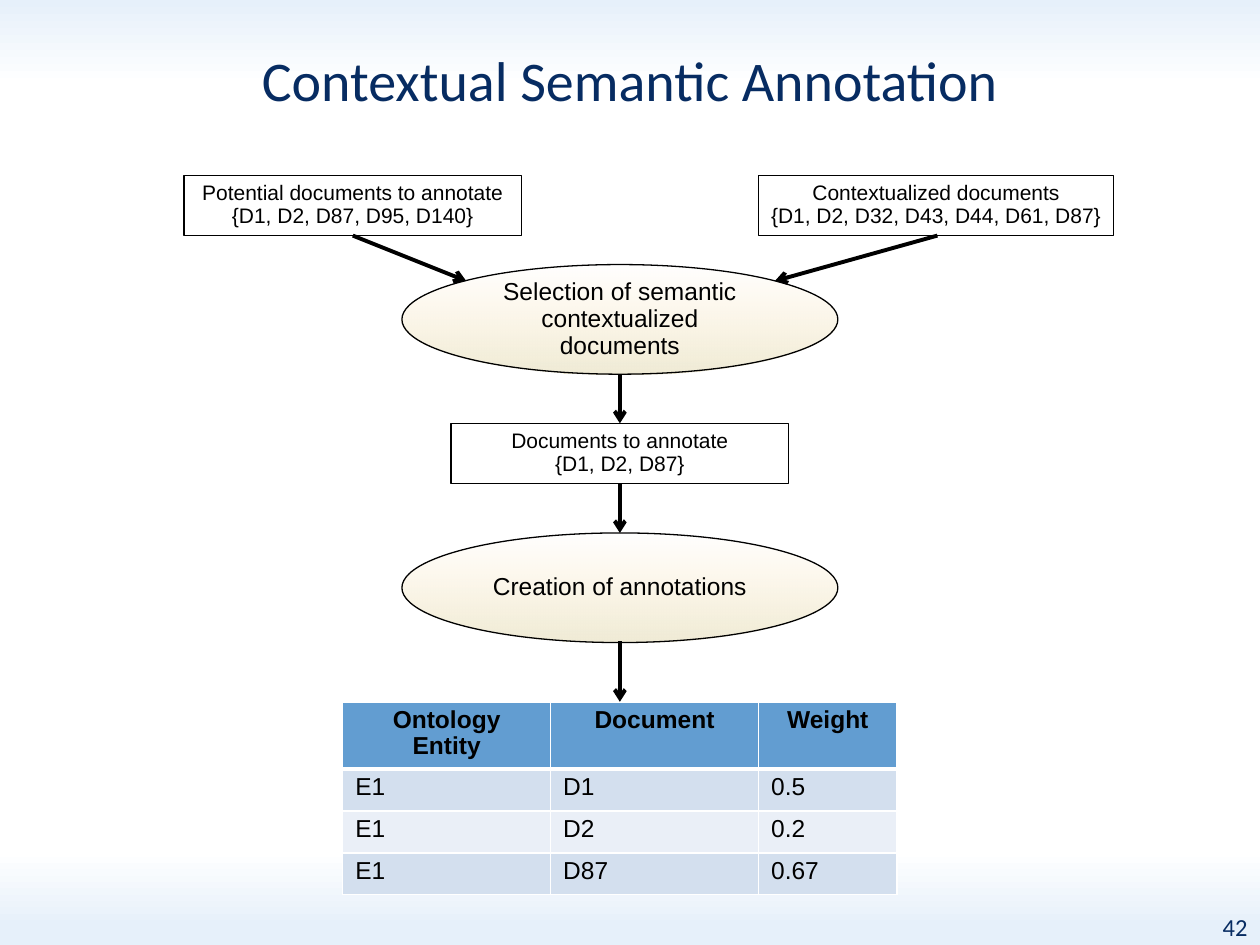
from typing import NamedTuple

from lxml import etree
from pptx import Presentation
from pptx import util as u
from pptx.dml.color import RGBColor
from pptx.enum import shapes, text
from pptx.oxml import ns

COLORS = {
    "navy": "072C62", "black": "000000", "white": "FFFFFF", "sky": "E6F0FA",
    "cream": "FFEFD1", "sand": "F0EBD5",
    "header": "629DD1", "band": "D3DFEE", "light": "EAEFF7",
}
AXIS = 4.92  # centre line of the flow
LINE_SPACING = 0.93
CENTER, LEFT, RIGHT = text.PP_ALIGN.CENTER, text.PP_ALIGN.LEFT, text.PP_ALIGN.RIGHT


class Stop(NamedTuple):
    pos: int
    color: str
    alpha: int = 100


class Font(NamedTuple):
    size: int
    color: str = "black"
    name: str = "Arial"
    bold: bool = False


class DocumentBox(NamedTuple):
    left: float
    top: float
    width: float
    lines: tuple[str, ...]


class Step(NamedTuple):
    top: float
    label: str


class Arrow(NamedTuple):
    x1: float
    y1: float
    x2: float
    y2: float


BOXES = [
    DocumentBox(1.46, 1.39, 2.68, ("Potential documents to annotate", "{D1, D2, D87, D95, D140}")),
    DocumentBox(6.02, 1.39, 2.82, ("Contextualized documents", "{D1, D2, D32, D43, D44, D61, D87}")),
    DocumentBox(AXIS - 1.34, 3.36, 2.68, ("Documents to annotate", "{D1, D2, D87}")),
]
STEPS = [Step(2.1, "Selection of semantic contextualized documents"),
         Step(4.23, "Creation of annotations")]
ARROWS = [Arrow(2.8, 1.87, 3.7, 2.23), Arrow(7.44, 1.87, 6.15, 2.23)] + [
    Arrow(AXIS, y1, AXIS, y2)
    for y1, y2 in [(2.97, 3.36), (3.84, 4.23), (5.09, 5.57)]
]
ROWS = [
    ("Ontology Entity", "Document", "Weight"),
    ("E1", "D1", "0.5"),
    ("E1", "D2", "0.2"),
    ("E1", "D87", "0.67"),
]
COLUMN_WIDTHS = [1.65, 1.65, 1.1]
ROW_HEIGHT = 1.33 / len(ROWS)


def rgb(name: str) -> RGBColor:
    return RGBColor.from_string(COLORS[name])


def child(parent, tag: str, **attrs: str):
    return etree.SubElement(parent, ns.qn(tag), **attrs)


def set_gradient(fill, element, stops: list[Stop]) -> None:
    """Fill from top to bottom; element is the XML that holds the fill."""
    fill.gradient()
    fill.gradient_angle = 270
    gs_list = element.find(".//" + ns.qn("a:gsLst"))
    for old in list(gs_list):
        gs_list.remove(old)
    for stop in stops:
        gs = child(gs_list, "a:gs", pos=str(stop.pos * 1000))
        color = child(gs, "a:srgbClr", val=COLORS[stop.color])
        if stop.alpha < 100:
            child(color, "a:alpha", val=str(stop.alpha * 1000))


def write(tf, lines: tuple[str, ...], font: Font, align=CENTER) -> None:
    for i, line in enumerate(lines):
        p = tf.paragraphs[0] if i == 0 else tf.add_paragraph()
        p.alignment = align
        p.line_spacing = LINE_SPACING
        r = p.add_run()
        r.text = line
        r.font.size = u.Pt(font.size)
        r.font.name = font.name
        r.font.bold = font.bold
        r.font.color.rgb = rgb(font.color)


def add_label(s, left: float, top: float, width: float, height: float,
              label: str, font: Font, align):
    tf = s.shapes.add_textbox(*map(u.Inches, (left, top, width, height))).text_frame
    tf.word_wrap = True
    write(tf, (label,), font, align)
    return tf


def add_outlined(s, kind, left: float, top: float, width: float, height: float):
    sp = s.shapes.add_shape(kind, *map(u.Inches, (left, top, width, height)))
    sp.shadow.inherit = False
    sp.line.color.rgb = rgb("black")
    sp.line.width = u.Pt(0.75)
    return sp


def add_box(s, box: DocumentBox) -> None:
    sp = add_outlined(s, shapes.MSO_SHAPE.RECTANGLE, box.left, box.top, box.width, 0.48)
    sp.fill.background()
    tf = sp.text_frame
    tf.word_wrap = False
    tf.vertical_anchor = text.MSO_ANCHOR.TOP
    write(tf, box.lines, Font(12))


def add_step(s, step: Step) -> None:
    sp = add_outlined(s, shapes.MSO_SHAPE.OVAL, AXIS - 1.73, step.top, 3.46, 0.87)
    set_gradient(sp.fill, sp.element, [Stop(0, "cream", 0), Stop(100, "sand")])
    tf = sp.text_frame
    tf.word_wrap = True
    tf.vertical_anchor = text.MSO_ANCHOR.MIDDLE
    write(tf, (step.label,), Font(14))


def add_arrow(s, arrow: Arrow) -> None:
    cxn = s.shapes.add_connector(shapes.MSO_CONNECTOR.STRAIGHT, *map(u.Inches, arrow))
    cxn.line.color.rgb = rgb("black")
    cxn.line.width = u.Pt(2.25)
    child(cxn.line._get_or_add_ln(), "a:tailEnd", type="arrow")
    child(cxn.element.spPr, "a:effectLst")


def set_borders(cell, widths: dict[str, int]) -> None:
    """Draw white borders, placed before the fill as the schema asks."""
    tc_pr = cell._tc.get_or_add_tcPr()
    for i, (side, width) in enumerate(widths.items()):
        ln = etree.Element(ns.qn(f"a:ln{side}"), w=str(u.Pt(width)))
        child(child(ln, "a:solidFill"), "a:srgbClr", val=COLORS["white"])
        tc_pr.insert(i, ln)


def add_annotation_table(s) -> None:
    frame = s.shapes.add_table(
        len(ROWS), len(COLUMN_WIDTHS), u.Inches(2.72), u.Inches(5.57),
        u.Inches(sum(COLUMN_WIDTHS)), u.Inches(ROW_HEIGHT * len(ROWS)))
    table = frame.table
    for column, width in zip(table.columns, COLUMN_WIDTHS):
        column.width = u.Inches(width)
    for i, row in enumerate(ROWS):
        head = i == 0
        table.rows[i].height = u.Inches(ROW_HEIGHT)
        for j, value in enumerate(row):
            cell = table.cell(i, j)
            cell.fill.solid()
            cell.fill.fore_color.rgb = rgb("header" if head else "band" if i % 2 else "light")
            set_borders(cell, {"L": 1, "R": 1, "T": 3 if i == 1 else 1, "B": 3 if head else 1})
            write(cell.text_frame, (value,), Font(14, bold=head), CENTER if head else LEFT)


def main() -> None:
    prs = Presentation()
    prs.slide_width, prs.slide_height = u.Inches(10), u.Inches(7.5)
    s = prs.slides.add_slide(prs.slide_layouts[6])
    set_gradient(s.background.fill, s.element, [
        Stop(0, "sky"), Stop(9, "white"), Stop(90, "white"), Stop(98, "sky")])

    title = add_label(s, 0, 0.25, 10, 0.82, "Contextual Semantic Annotation",
                      Font(32, "navy", "Calibri"), CENTER)
    title.vertical_anchor = text.MSO_ANCHOR.MIDDLE
    title.margin_left = title.margin_right = title.margin_top = title.margin_bottom = 0
    add_label(s, 8.94, 7.21, 1.06, 0.28, "42", Font(14, "navy", "Calibri"), RIGHT)

    for box in BOXES:
        add_box(s, box)
    for step in STEPS:
        add_step(s, step)
    add_annotation_table(s)
    for arrow in ARROWS:
        add_arrow(s, arrow)
    prs.save("out.pptx")


if __name__ == "__main__":
    main()
